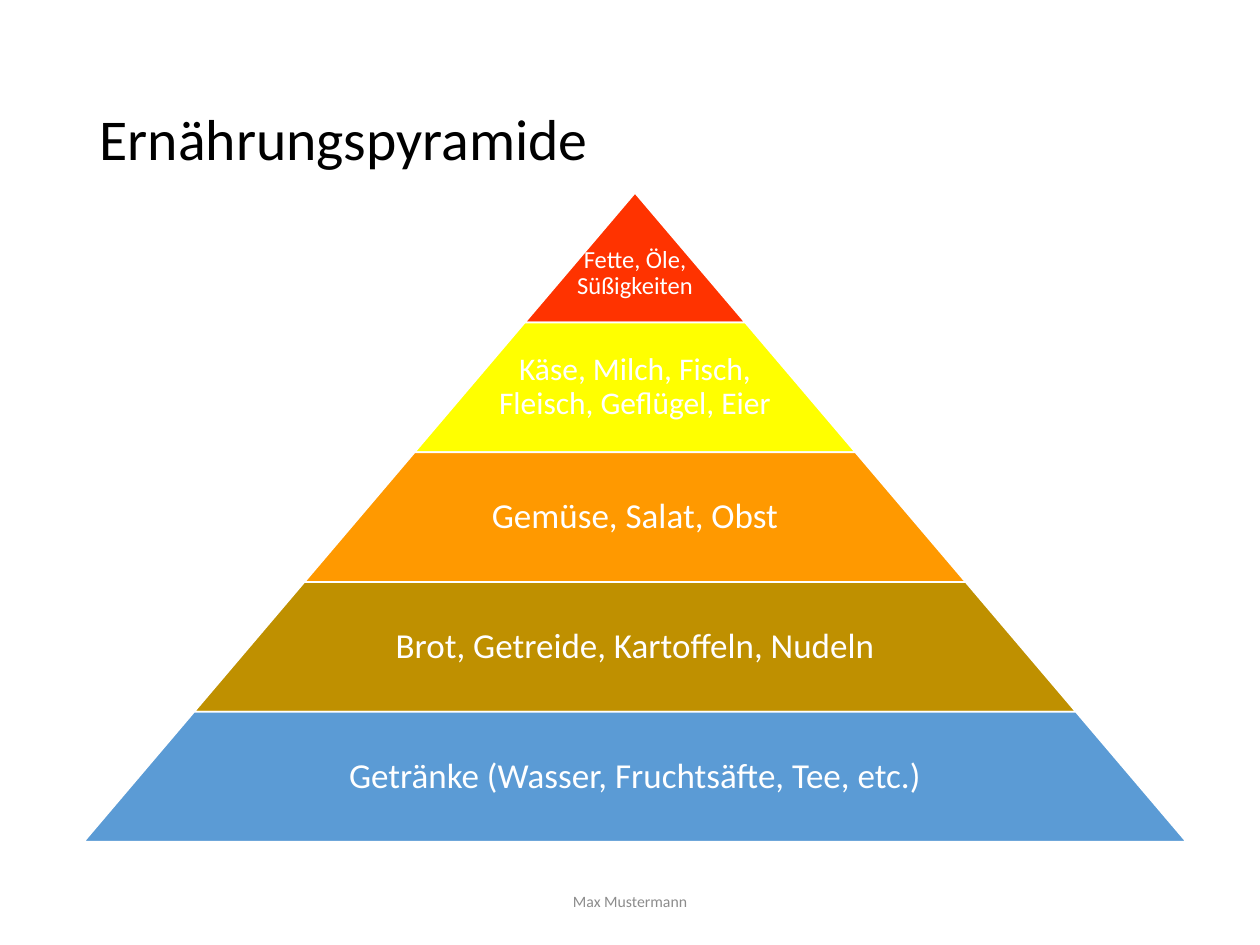
from pptx import Presentation
from pptx.dml.color import RGBColor
from pptx.enum.shapes import MSO_SHAPE as Shape
from pptx.enum.text import MSO_ANCHOR as Anchor, MSO_AUTO_SIZE as AutoSize, PP_ALIGN as Align
from pptx.util import Inches, Pt

BLACK = RGBColor(0x00, 0x00, 0x00)
WHITE = RGBColor(0xFF, 0xFF, 0xFF)
GRAY = RGBColor(0x8C, 0x8C, 0x8C)
RED = RGBColor(0xFF, 0x33, 0x00)
YELLOW = RGBColor(0xFF, 0xFF, 0x00)
ORANGE = RGBColor(0xFF, 0x99, 0x00)
BROWN = RGBColor(0xBF, 0x90, 0x00)
BLUE = RGBColor(0x5B, 0x9B, 0xD5)

CENTER = 5.04
PYRAMID_TOP = 1.53
TIER_HEIGHT = 1.03
TIER_STEP = 1.75
TEXT_SHARE = 0.65
TIERS = [
    ("Fette, Öle, Süßigkeiten", RED, 14),
    ("Käse, Milch, Fisch, Fleisch, Geflügel, Eier", YELLOW, 18),
    ("Gemüse, Salat, Obst", ORANGE, 20),
    ("Brot, Getreide, Kartoffeln, Nudeln", BROWN, 20),
    ("Getränke (Wasser, Fruchtsäfte, Tee, etc.)", BLUE, 20),
]


def write_text(shape, text, size, color, align=Align.CENTER, spacing=0.9,
               margin=None, top_margin=None):
    frame = shape.text_frame
    frame.word_wrap = True
    frame.auto_size = AutoSize.NONE
    frame.vertical_anchor = Anchor.MIDDLE
    if margin is not None:
        frame.margin_left = frame.margin_right = Inches(margin)
        frame.margin_top = frame.margin_bottom = Inches(margin)
    if top_margin is not None:
        frame.margin_top = Inches(top_margin)
    paragraph = frame.paragraphs[0]
    paragraph.alignment = align
    paragraph.line_spacing = spacing
    run = paragraph.add_run()
    run.text = text
    run.font.name = "Calibri"
    run.font.size = Pt(size)
    run.font.color.rgb = color


class SlideBuilder:
    def __init__(self, slide):
        self.slide = slide

    def title(self, text):
        shape = self.slide.shapes.title
        shape.left, shape.top = Inches(0.69), Inches(0.4)
        shape.width, shape.height = Inches(8.62), Inches(1.45)
        write_text(shape, text, 33, BLACK, align=Align.LEFT)

    def footer(self, text):
        shape = self.slide.shapes.add_textbox(
            Inches(3.31), Inches(6.95), Inches(3.38), Inches(0.4))
        write_text(shape, text, 9, GRAY, spacing=1.0)

    def tier(self, group, index, text, fill, size):
        width = TIER_STEP * (index + 1)
        top = Inches(PYRAMID_TOP + TIER_HEIGHT * index)
        height = Inches(TIER_HEIGHT)
        trapezoid = group.shapes.add_shape(
            Shape.TRAPEZOID, Inches(CENTER - width / 2), top, Inches(width), height)
        trapezoid.adjustments[0] = TIER_STEP / 2 / TIER_HEIGHT
        trapezoid.shadow.inherit = False
        trapezoid.fill.solid()
        trapezoid.fill.fore_color.rgb = fill
        trapezoid.line.color.rgb = WHITE
        trapezoid.line.width = Pt(1)

        is_tip = index == 0
        text_width = width if is_tip else width * TEXT_SHARE
        label = group.shapes.add_textbox(
            Inches(CENTER - text_width / 2), top, Inches(text_width), height)
        write_text(label, text, size, WHITE, margin=0.03,
                   top_margin=0.28 if is_tip else None)

    def pyramid(self, tiers):
        group = self.slide.shapes.add_group_shape()
        for index, (text, fill, size) in enumerate(tiers):
            self.tier(group, index, text, fill, size)


def main():
    presentation = Presentation()
    presentation.slide_width, presentation.slide_height = Inches(10), Inches(7.5)
    slide = presentation.slides.add_slide(presentation.slide_layouts[5])
    builder = SlideBuilder(slide)
    builder.title("Ernährungspyramide")
    builder.footer("Max Mustermann")
    builder.pyramid(TIERS)
    presentation.save("out.pptx")


if __name__ == "__main__":
    main()
